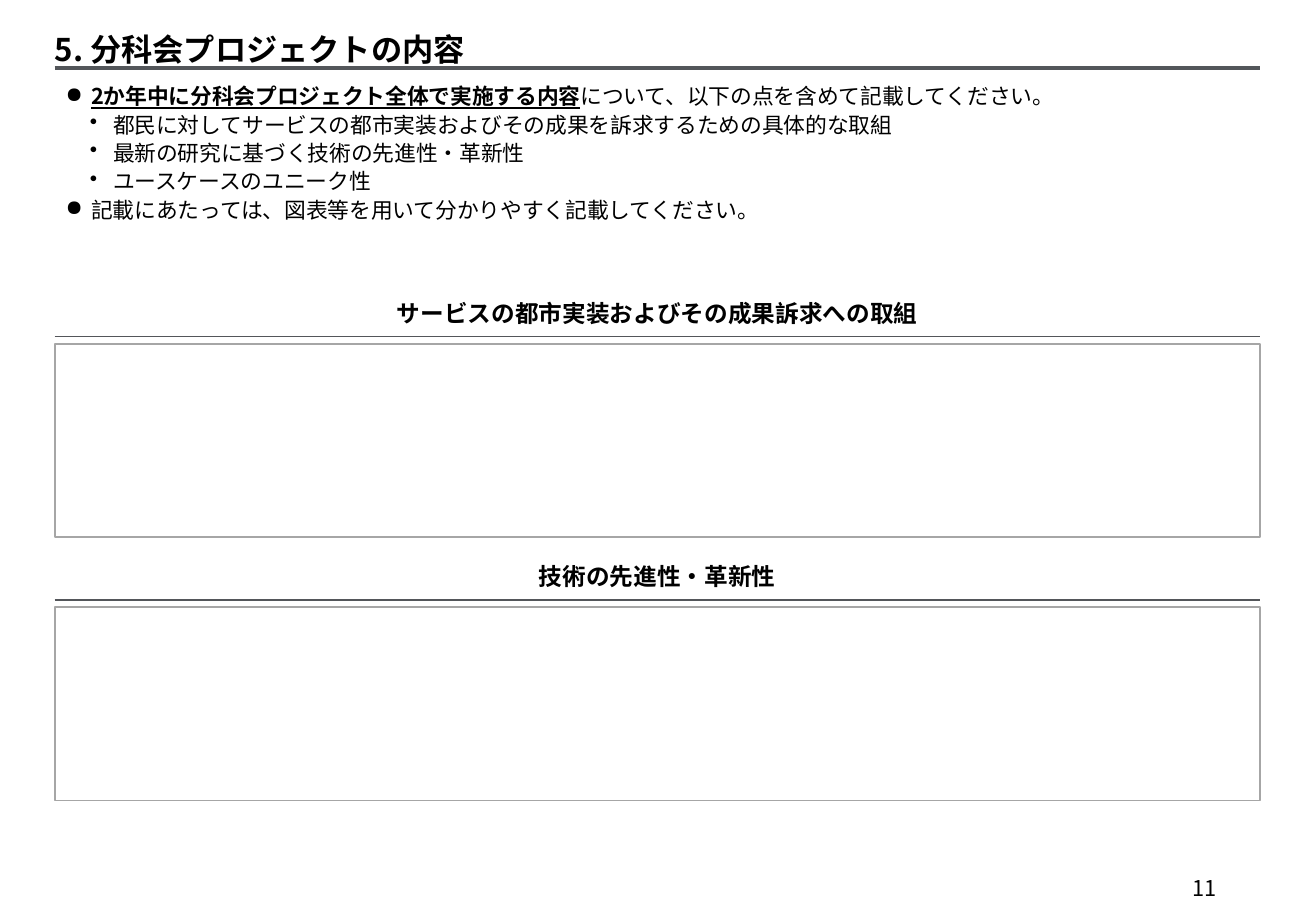
from lxml.etree import SubElement
from pptx import Presentation
from pptx.dml.color import RGBColor
from pptx.enum.shapes import MSO_CONNECTOR, MSO_SHAPE
from pptx.enum.text import MSO_ANCHOR, MSO_AUTO_SIZE, PP_ALIGN
from pptx.oxml.ns import qn
from pptx.util import Inches, Pt

BLACK = RGBColor(0x00, 0x00, 0x00)
WHITE = RGBColor(0xFF, 0xFF, 0xFF)
RULE_GRAY = RGBColor(0x53, 0x56, 0x5A)
FRAME_GRAY = RGBColor(0xA6, 0xA6, 0xA6)
BODY_FONT = "Noto Sans CJK JP"
HEADING_FONT = "Open Sans"

LEFT, WIDTH = 0.45, 9.92
BODY_SIZE = 12.9
BULLETS = {0: ("●", 0.21, 0.21), 1: ("•", 0.39, 0.19)}
INSTRUCTIONS = [
    (0, [("2か年中に分科会プロジェクト全体で実施する内容", True),
         ("について、以下の点を含めて記載してください。", False)]),
    (1, [("都民に対してサービスの都市実装およびその成果を訴求するための具体的な取組", False)]),
    (1, [("最新の研究に基づく技術の先進性・革新性", False)]),
    (1, [("ユースケースのユニーク性", False)]),
    (0, [("記載にあたっては、図表等を用いて分かりやすく記載してください。", False)]),
]
SECTIONS = ["サービスの都市実装およびその成果訴求への取組", "技術の先進性・革新性"]
SECTION_TOP, SECTION_PITCH = 2.38, 2.17


def add_run(paragraph, text, size, bold=False, underline=False, font=BODY_FONT):
    """Append a black run with its Latin and East Asian fonts."""
    run = paragraph.add_run()
    run.text = text
    run.font.size = Pt(size)
    run.font.bold = bold
    run.font.underline = underline
    run.font.color.rgb = BLACK
    run.font.name = font
    SubElement(run.font._element, qn("a:ea")).set("typeface", BODY_FONT)


def set_frame(frame, anchor, inset=0, wrap=True):
    """Set anchor, equal insets and wrapping of a text frame."""
    frame.auto_size = MSO_AUTO_SIZE.NONE
    frame.word_wrap = wrap
    frame.vertical_anchor = anchor
    frame.margin_left = frame.margin_right = Inches(inset)
    frame.margin_top = frame.margin_bottom = Inches(inset)


def add_rule(slide, left, top, width, weight):
    """Draw a horizontal gray rule."""
    rule = slide.shapes.add_connector(
        MSO_CONNECTOR.STRAIGHT, Inches(left), Inches(top), Inches(left + width), Inches(top))
    rule.line.color.rgb = RULE_GRAY
    rule.line.width = Pt(weight)
    SubElement(rule._element.spPr, qn("a:effectLst"))


def add_title(slide, left, top, width, height):
    """Place the slide title with the rule under it."""
    add_rule(slide, left, top + height, width, 2.25)
    title = slide.shapes.title
    title.left, title.top = Inches(left), Inches(top)
    title.width, title.height = Inches(width), Inches(height)
    set_frame(title.text_frame, MSO_ANCHOR.BOTTOM)
    heading = title.text_frame.paragraphs[0]
    heading.alignment = PP_ALIGN.LEFT
    heading.line_spacing = 1.1
    add_run(heading, "5. 分科会プロジェクトの内容", 18.5, bold=True)


def add_instructions(slide, left, top, width, height):
    """Write the two-level bulleted instructions."""
    box = slide.shapes.add_textbox(Inches(left), Inches(top), Inches(width), Inches(height))
    frame = box.text_frame
    set_frame(frame, MSO_ANCHOR.TOP, 0.05)
    frame.margin_left = frame.margin_right = Inches(0.09)
    for index, (level, parts) in enumerate(INSTRUCTIONS):
        item = frame.add_paragraph() if index else frame.paragraphs[0]
        mark, margin, hanging = BULLETS[level]
        properties = item._p.get_or_add_pPr()
        properties.set("marL", str(Inches(margin)))
        properties.set("indent", str(-Inches(hanging)))
        SubElement(properties, qn("a:buChar")).set("char", mark)
        item.level = level
        item.line_spacing = 0.83
        if index:
            item.space_before = Pt(4)
        for text, stressed in parts:
            add_run(item, text, BODY_SIZE, bold=stressed, underline=stressed)


def add_section(slide, caption, left, top, width):
    """Place a centred caption, its rule and the empty entry frame."""
    caption_height = 0.39
    heading = slide.shapes.add_textbox(
        Inches(left), Inches(top), Inches(width), Inches(caption_height))
    set_frame(heading.text_frame, MSO_ANCHOR.MIDDLE, 0.04)
    line = heading.text_frame.paragraphs[0]
    line.alignment = PP_ALIGN.CENTER
    add_run(line, caption, 14, bold=True, font=HEADING_FONT)
    add_rule(slide, left, top + caption_height, width, 1)
    entry = slide.shapes.add_shape(
        MSO_SHAPE.RECTANGLE, Inches(left), Inches(top + 0.45), Inches(width), Inches(1.59))
    entry.shadow.inherit = False
    entry.fill.solid()
    entry.fill.fore_color.rgb = WHITE
    entry.line.color.rgb = FRAME_GRAY
    entry.line.width = Pt(1)


def add_page_number(slide, left, top, width, height):
    """Write the page number in the lower right corner."""
    number = slide.shapes.add_textbox(Inches(left), Inches(top), Inches(width), Inches(height))
    set_frame(number.text_frame, MSO_ANCHOR.MIDDLE, wrap=False)
    line = number.text_frame.paragraphs[0]
    line.alignment = PP_ALIGN.CENTER
    add_run(line, "11", BODY_SIZE)


def main():
    """Build and save the slide."""
    deck = Presentation()
    deck.slide_width, deck.slide_height = Inches(10.83), Inches(7.5)
    slide = deck.slides.add_slide(deck.slide_layouts[5])
    add_title(slide, LEFT, 0.17, WIDTH, 0.39)
    add_instructions(slide, LEFT, 0.67, WIDTH, 1.5)
    for index, caption in enumerate(SECTIONS):
        add_section(slide, caption, LEFT, SECTION_TOP + index * SECTION_PITCH, WIDTH)
    add_page_number(slide, 9.82, 7.21, 0.18, 0.2)
    deck.save("out.pptx")


if __name__ == "__main__":
    main()
